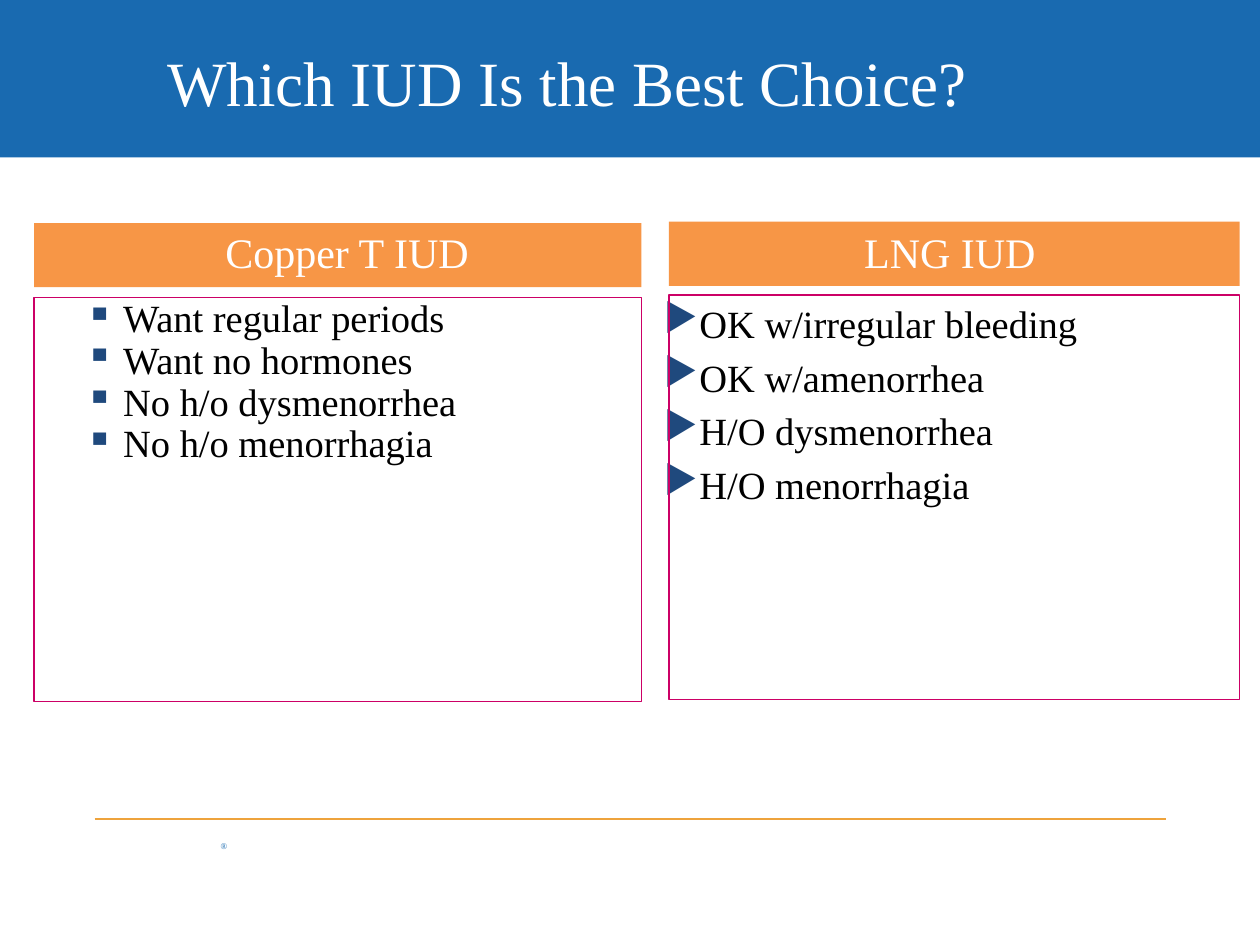
import pptx
import pptx.dml.color
import pptx.enum.shapes
import pptx.enum.text
import pptx.oxml
import pptx.oxml.ns
import pptx.util
from pptx.util import Inches

FONT = "Times New Roman"
BLUE, ORANGE, GOLD, MAGENTA = "196AB0", "F79646", "EEA33C", "CC0066"
NAVY, WHITE, BLACK = "1F497D", "FFFFFF", "000000"


def rgb(value):
    """Return the colour for a hex string."""
    return pptx.dml.color.RGBColor.from_string(value)


def add_rect(s, box, fill=None, line=None):
    """Add a rectangle with an optional fill and outline."""
    kind = pptx.enum.shapes.MSO_SHAPE.RECTANGLE
    sp = s.shapes.add_shape(kind, *map(Inches, box))
    sp.shadow.inherit = False
    if fill:
        sp.fill.solid()
        sp.fill.fore_color.rgb = rgb(fill)
    else:
        sp.fill.background()
    if line:
        sp.line.color.rgb = rgb(line)
        sp.line.width = pptx.util.Pt(0.75)
    else:
        sp.line.fill.background()
    return sp


def add_rule(s, x1, x2, y, color):
    """Add a thin horizontal line."""
    kind = pptx.enum.shapes.MSO_CONNECTOR.STRAIGHT
    sp = s.shapes.add_connector(kind, Inches(x1), Inches(y), Inches(x2), Inches(y))
    sp.line.color.rgb = rgb(color)
    sp.line.width = pptx.util.Pt(0.75)
    pptx.oxml.ns.qn("a:effectLst")
    sp._element.spPr.append(pptx.oxml.parse_xml(
        f'<a:effectLst {pptx.oxml.ns.nsdecls("a")}/>'))


def style_runs(p, size, color):
    """Format every run of a paragraph."""
    for r in p.runs:
        r.font.name = FONT
        r.font.size = pptx.util.Pt(size)
        r.font.color.rgb = rgb(color)


def add_text(s, box, text, size, color, wrap=True):
    """Add a text box and return its text frame."""
    tf = s.shapes.add_textbox(*map(Inches, box)).text_frame
    tf.word_wrap = wrap
    tf.text = text
    for p in tf.paragraphs:
        style_runs(p, size, color)
    return tf


def add_bullet(p, char, indent):
    """Give a paragraph a coloured bullet with a hanging indent."""
    pPr = p._p.get_or_add_pPr()
    pPr.set("marL", str(Inches(indent)))
    pPr.set("indent", str(-Inches(indent)))
    ns = pptx.oxml.ns.nsdecls("a")
    pPr.append(pptx.oxml.parse_xml(
        f'<a:buClr {ns}><a:srgbClr val="{NAVY}"/></a:buClr>'))
    pPr.append(pptx.oxml.parse_xml(f'<a:buChar {ns} char="{char}"/>'))


def add_list(s, box, items, char, indent, spacing=1.0, before=0):
    """Add a bulleted list."""
    tf = add_text(s, box, "\n".join(items), 22, BLACK)
    for i, p in enumerate(tf.paragraphs):
        p.line_spacing = spacing
        p.space_before = pptx.util.Pt(before if i else 0)
        add_bullet(p, char, indent)


def add_header(s, bar, label_box, text):
    """Add a column header bar with its label."""
    add_rect(s, bar, fill=ORANGE)
    add_text(s, label_box, text, 24, WHITE, wrap=False)


def main():
    """Build and save the slide."""
    prs = pptx.Presentation()
    prs.slide_width, prs.slide_height = Inches(10), Inches(7.5)
    s = prs.slides.add_slide(prs.slide_layouts[6])

    add_rect(s, (0, 0, 10, 1.25), fill=BLUE)
    tf = add_text(s, (0, 0.17, 9, 0.95), "Which IUD Is the Best Choice?", 36, WHITE)
    tf.vertical_anchor = pptx.enum.text.MSO_ANCHOR.MIDDLE
    tf.paragraphs[0].alignment = pptx.enum.text.PP_ALIGN.CENTER

    add_header(s, (0.27, 1.77, 4.82, 0.51), (1.69, 1.75, 2.27, 0.5), "Copper T IUD")
    add_list(s, (0.58, 2.33, 4.27, 3.33),
             ["Want regular periods", "Want no hormones",
              "No h/o dysmenorrhea", "No h/o menorrhagia"],
             "▪", 0.3, spacing=0.9)
    add_rect(s, (0.27, 2.36, 4.82, 3.21), line=MAGENTA)

    add_header(s, (5.31, 1.76, 4.53, 0.51), (6.76, 1.75, 1.61, 0.5), "LNG IUD")
    add_list(s, (5.17, 2.33, 4.83, 3.66),
             ["OK w/irregular bleeding", "OK w/amenorrhea",
              "H/O dysmenorrhea", "H/O menorrhagia"],
             "▶", 0.27, before=4.4)
    add_rect(s, (5.31, 2.34, 4.53, 3.21), line=MAGENTA)

    add_rule(s, 0.75, 9.25, 6.5, GOLD)
    tf = add_text(s, (1.75, 6.67, 0.25, 0.08), "®", 5, BLUE)
    tf.margin_left = tf.margin_right = tf.margin_top = tf.margin_bottom = 0

    prs.save("out.pptx")


if __name__ == "__main__":
    main()
